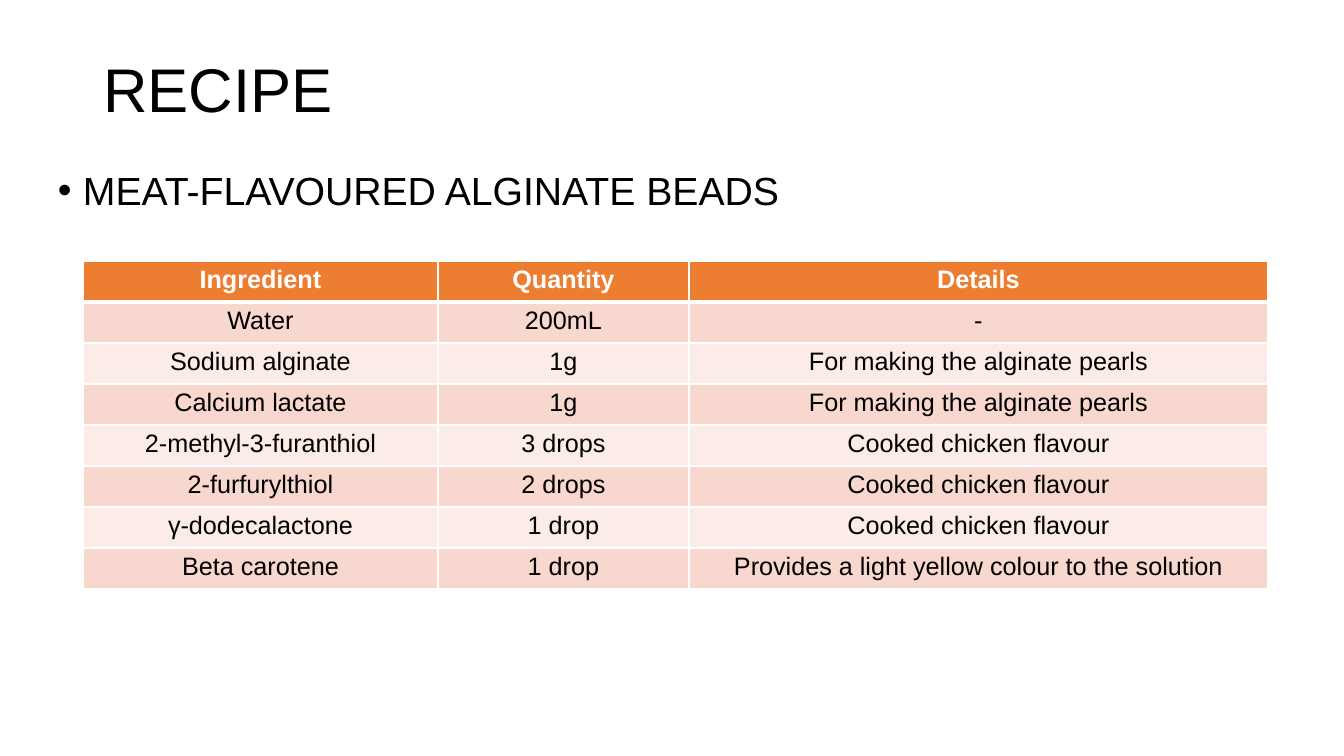
from dataclasses import dataclass

from lxml.etree import SubElement
from pptx import Presentation
from pptx.dml.color import RGBColor
from pptx.enum.text import MSO_ANCHOR, PP_ALIGN
from pptx.oxml.ns import qn
from pptx.util import Pt

EMU_PER_PX = 914400 / 100.8


def px(length):
    """Turn whole pixels into EMU."""
    return round(length * EMU_PER_PX)


@dataclass(frozen=True)
class Theme:
    """Colours, font and type sizes of the slide."""
    font: str = "Arial"
    ink: str = "000000"
    white: str = "FFFFFF"
    header: str = "ED7D31"
    bands: tuple = ("F8D7CE", "FCECE8")
    title_size: int = 44
    heading_size: int = 28
    table_size: int = 18
    rule: int = 1
    header_rule: int = 3


class RecipeSlide:
    """Draws styled elements on one title-only slide."""

    def __init__(self, deck, theme):
        """Add the slide to the deck."""
        self.theme = theme
        self.page = deck.slides.add_slide(deck.slide_layouts[5])

    def format_para(self, para, size, color, align, bold=False):
        """Align a paragraph and style its runs."""
        para.alignment = align
        for span in para.runs:
            span.font.name = self.theme.font
            span.font.size = Pt(size)
            span.font.bold = bold
            span.font.color.rgb = RGBColor.from_string(color)

    def title(self, text, left, top, width, height):
        """Place and format the title placeholder."""
        box = self.page.shapes.title
        box.left, box.top = px(left), px(top)
        box.width, box.height = px(width), px(height)
        box.text_frame.text = text
        box.text_frame.vertical_anchor = MSO_ANCHOR.MIDDLE
        para = box.text_frame.paragraphs[0]
        para.line_spacing = 0.9
        self.format_para(para, self.theme.title_size, self.theme.ink, PP_ALIGN.LEFT)

    def bullet(self, text, left, top, width, height, indent):
        """Add a bulleted heading."""
        box = self.page.shapes.add_textbox(px(left), px(top), px(width), px(height))
        box.text_frame.word_wrap = True
        box.text_frame.text = text
        para = box.text_frame.paragraphs[0]
        para.line_spacing = 1.5
        self.format_para(para, self.theme.heading_size, self.theme.ink, PP_ALIGN.JUSTIFY)
        properties = para._p.get_or_add_pPr()
        properties.set("marL", str(px(indent)))
        properties.set("indent", str(-px(indent)))
        SubElement(properties, qn("a:buFont"), typeface=self.theme.font)
        SubElement(properties, qn("a:buChar"), char="•")

    def borders(self, cell, top, bottom):
        """Rule all four sides of a cell in white."""
        properties = cell._tc.get_or_add_tcPr()
        side_rule = self.theme.rule
        for side, weight in zip("LRTB", (side_rule, side_rule, top, bottom)):
            line = SubElement(properties, qn(f"a:ln{side}"), w=str(Pt(weight)))
            fill = SubElement(line, qn("a:solidFill"))
            SubElement(fill, qn("a:srgbClr"), val=self.theme.white)

    def table(self, rows, left, top, column_widths, row_height):
        """Add a table with a header row and banded body rows."""
        theme = self.theme
        table = self.page.shapes.add_table(
            len(rows), len(column_widths), px(left), px(top),
            px(sum(column_widths)), px(row_height * len(rows))).table
        for column, width in zip(table.columns, column_widths):
            column.width = px(width)
        for index, values in enumerate(rows):
            table.rows[index].height = px(row_height)
            is_header = index == 0
            fill = theme.header if is_header else theme.bands[(index - 1) % 2]
            color = theme.white if is_header else theme.ink
            above = theme.header_rule if index == 1 else theme.rule
            below = theme.header_rule if is_header else theme.rule
            for cell, value in zip(table.rows[index].cells, values):
                cell.text_frame.text = value
                self.format_para(cell.text_frame.paragraphs[0], theme.table_size,
                                 color, PP_ALIGN.CENTER, is_header)
                self.borders(cell, above, below)
                cell.fill.solid()
                cell.fill.fore_color.rgb = RGBColor.from_string(fill)


RECIPE_ROWS = [
    ("Ingredient", "Quantity", "Details"),
    ("Water", "200mL", "-"),
    ("Sodium alginate", "1g", "For making the alginate pearls"),
    ("Calcium lactate", "1g", "For making the alginate pearls"),
    ("2-methyl-3-furanthiol", "3 drops", "Cooked chicken flavour"),
    ("2-furfurylthiol", "2 drops", "Cooked chicken flavour"),
    ("γ-dodecalactone", "1 drop", "Cooked chicken flavour"),
    ("Beta carotene", "1 drop", "Provides a light yellow colour to the solution"),
]


def main():
    """Build and save the recipe slide."""
    deck = Presentation()
    deck.slide_width, deck.slide_height = px(1344), px(756)
    recipe = RecipeSlide(deck, Theme())
    recipe.title("RECIPE", 93, 20, 1159, 146)
    recipe.bullet("MEAT-FLAVOURED ALGINATE BEADS", 48, 138, 1204, 480, indent=25)
    recipe.table(RECIPE_ROWS, 83, 261, (355, 251, 579), 41)
    deck.save("out.pptx")


if __name__ == "__main__":
    main()
